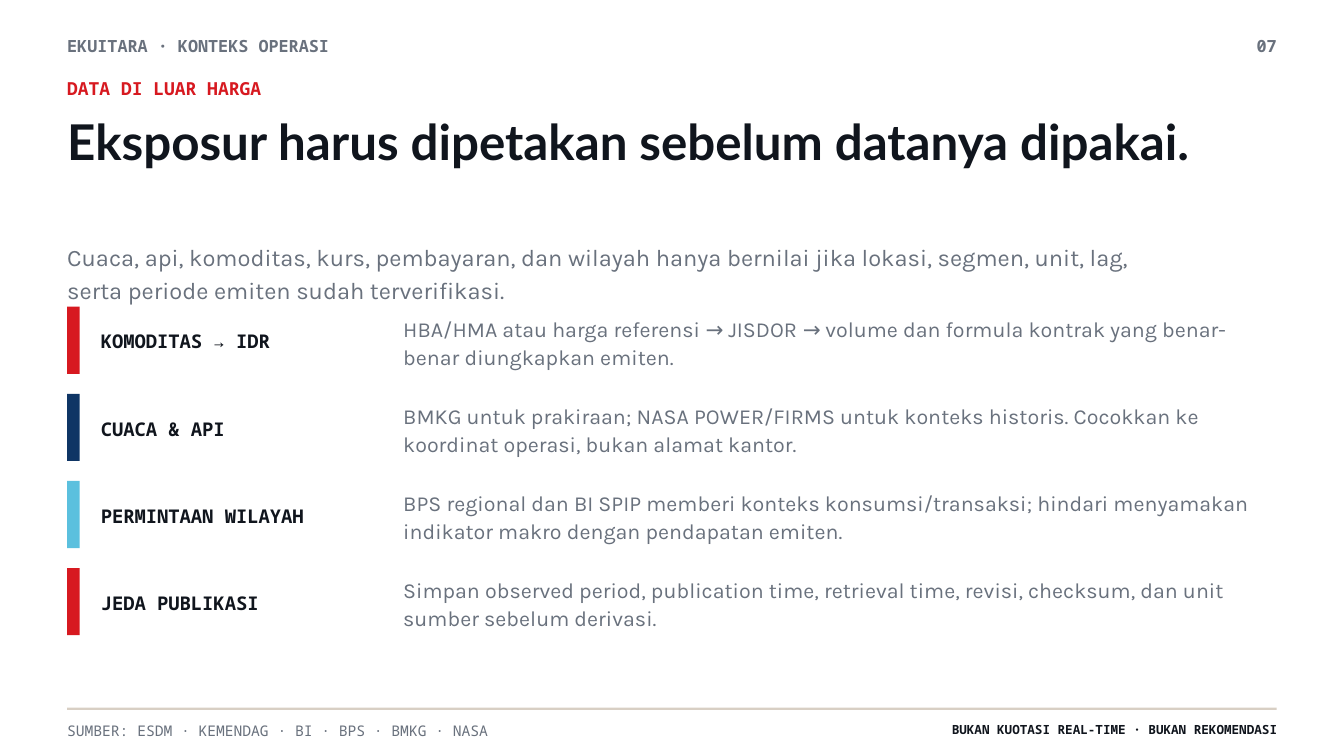
import pptx
import pptx.util
import pptx.dml.color
import pptx.enum.shapes
import pptx.enum.text

PX = 9525  # EMU per px at 96 px to the inch
COLORS = {
    "ink": "10151D", "gray": "69717D", "red": "D71920",
    "navy": "0F3565", "sky": "5BC0DE", "sand": "D8CFC4",
}
MONO, HEAD, BODY = "Noto Sans Mono", "Lato", "Karla"
ALIGN = pptx.enum.text.PP_ALIGN
ANCHOR = pptx.enum.text.MSO_ANCHOR
LEFT, WIDTH = 64, 1152
TOP, STEP = 292, 83

ROWS = [
    ("red", "KOMODITAS → IDR",
     "HBA/HMA atau harga referensi → JISDOR → volume dan formula kontrak "
     "yang benar-benar diungkapkan emiten."),
    ("navy", "CUACA & API",
     "BMKG untuk prakiraan; NASA POWER/FIRMS untuk konteks historis. "
     "Cocokkan ke koordinat operasi, bukan alamat kantor."),
    ("sky", "PERMINTAAN WILAYAH",
     "BPS regional dan BI SPIP memberi konteks konsumsi/transaksi; hindari "
     "menyamakan indikator makro dengan pendapatan emiten."),
    ("red", "JEDA PUBLIKASI",
     "Simpan observed period, publication time, retrieval time, revisi, "
     "checksum, dan unit sumber sebelum derivasi."),
]


class Deck:
    def __init__(self):
        self.prs = pptx.Presentation()
        self.prs.slide_width = 1280 * PX
        self.prs.slide_height = 720 * PX
        self.slide = self.prs.slides.add_slide(self.prs.slide_layouts[6])

    def color(self, name):
        return pptx.dml.color.RGBColor.from_string(COLORS[name])

    def text(self, box, words, size, font=MONO, color="gray", bold=False,
             align=ALIGN.LEFT, anchor=ANCHOR.TOP, lead=1.1):
        frame = self.slide.shapes.add_textbox(*(n * PX for n in box)).text_frame
        frame.word_wrap = True
        frame.vertical_anchor = anchor
        frame.margin_left = frame.margin_right = 0
        frame.margin_top = frame.margin_bottom = 0
        para = frame.paragraphs[0]
        para.alignment = align
        para.line_spacing = lead
        run = para.add_run()
        run.text = words
        run.font.name = font
        run.font.size = pptx.util.Pt(size)
        run.font.bold = bold
        run.font.color.rgb = self.color(color)

    def rect(self, box, color):
        kind = pptx.enum.shapes.MSO_SHAPE.RECTANGLE
        shape = self.slide.shapes.add_shape(kind, *(n * PX for n in box))
        shape.shadow.inherit = False
        shape.fill.solid()
        shape.fill.fore_color.rgb = self.color(color)
        shape.line.fill.background()

    def row(self, top, color, label, note):
        """Draw a colour bar with its label and explanation."""
        self.rect((LEFT, top, 12, 64), color)
        self.text((96, top + 8, 270, 48), label, 13.5, color="ink",
                  bold=True, anchor=ANCHOR.MIDDLE)
        self.text((384, top + 6, 832, 54), note, 15.3, BODY,
                  anchor=ANCHOR.MIDDLE)


def main():
    deck = Deck()
    deck.text((LEFT, 32, 580, 24), "EKUITARA · KONTEKS OPERASI", 12, bold=True)
    deck.text((1160, 32, 56, 24), "07", 12, bold=True, align=ALIGN.RIGHT)
    deck.rect((LEFT, 674, WIDTH, 2), "sand")
    deck.text((LEFT, 686, 940, 20),
              "SUMBER: ESDM · KEMENDAG · BI · BPS · BMKG · NASA", 10.5)
    deck.text((905, 686, 311, 20), "BUKAN KUOTASI REAL-TIME · BUKAN REKOMENDASI",
              9, color="ink", bold=True, align=ALIGN.RIGHT)
    deck.text((LEFT, 72, 780, 24), "DATA DI LUAR HARGA", 12.8,
              color="red", bold=True)
    deck.text((LEFT, 110, 1100, 110),
              "Eksposur harus dipetakan sebelum datanya dipakai.",
              35.2, HEAD, "ink", True, lead=0.95)
    deck.text((LEFT, 226, 1040, 64),
              "Cuaca, api, komoditas, kurs, pembayaran, dan wilayah hanya "
              "bernilai jika lokasi, segmen, unit, lag, serta periode emiten "
              "sudah terverifikasi.", 16.9, BODY, lead=1.18)
    for i, row in enumerate(ROWS):
        deck.row(TOP + i * STEP, *row)
    deck.prs.save("out.pptx")


if __name__ == "__main__":
    main()
